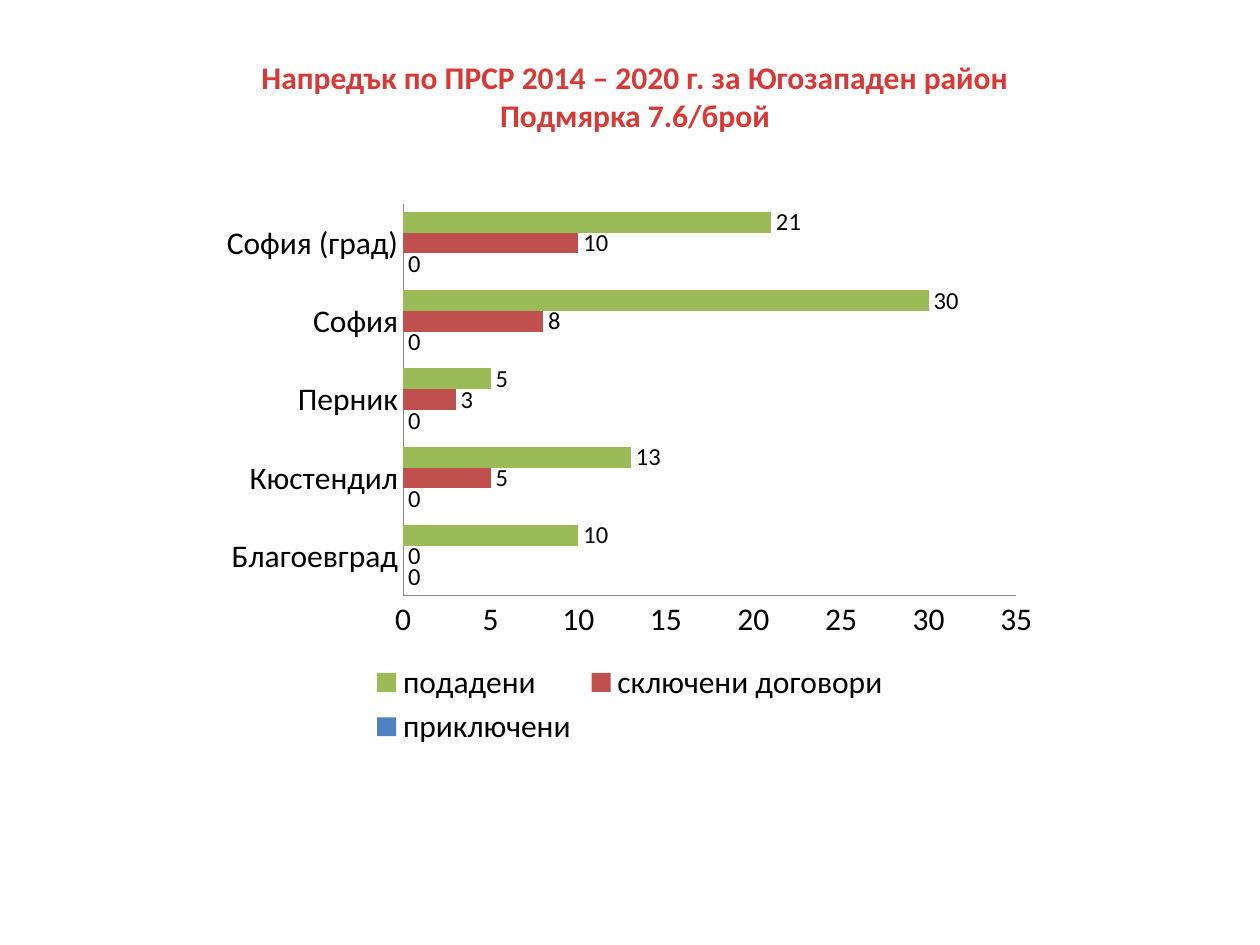
from dataclasses import dataclass

from pptx import Presentation
from pptx.chart.data import CategoryChartData
from pptx.dml.color import RGBColor
from pptx.enum.chart import XL_CHART_TYPE, XL_LABEL_POSITION, XL_LEGEND_POSITION, XL_TICK_MARK
from pptx.enum.text import MSO_ANCHOR, PP_ALIGN
from pptx.oxml import parse_xml
from pptx.oxml.ns import nsdecls
from pptx.util import Inches, Pt

FONT = "Calibri"
BLACK = "000000"
AXIS_GREY = "868686"
TITLE_RED = "D73A36"
TITLE = "Напредък по ПРСР 2014 – 2020 г. за Югозападен район\vПодмярка 7.6/брой"
DISTRICTS = ["Благоевград", "Кюстендил", "Перник", "София", "София (град)"]


@dataclass
class Box:
    left: float
    top: float
    width: float
    height: float

    def on_slide(self, presentation):
        width, height = presentation.slide_width, presentation.slide_height
        return (int(self.left * width), int(self.top * height),
                int(self.width * width), int(self.height * height))


@dataclass
class ProjectStage:
    name: str
    counts: list[int]
    color: str


TITLE_BOX = Box(0.054, 0.055, 0.9, 0.095)
CHART_BOX = Box(1 / 6, 0.204, 2 / 3, 0.592)
PLOT_BOX = Box(0.23, 0.02, 0.73, 0.7)
STAGES = [
    ProjectStage("приключени", [0, 0, 0, 0, 0], "4F81BD"),
    ProjectStage("сключени договори", [0, 5, 3, 8, 10], "C0504D"),
    ProjectStage("подадени", [10, 13, 5, 30, 21], "9BBB59"),
]


def rgb(color: str) -> RGBColor:
    return RGBColor.from_string(color)


def format_font(font, size: float, color: str = BLACK, bold: bool = False) -> None:
    font.name = FONT
    font.size = Pt(size)
    font.bold = bold
    font.color.rgb = rgb(color)


def write_text(shape, text: str, *, size: float, color: str, bold: bool, align) -> None:
    frame = shape.text_frame
    frame.word_wrap = True
    frame.vertical_anchor = MSO_ANCHOR.TOP
    paragraph = frame.paragraphs[0]
    paragraph.text = text
    paragraph.alignment = align
    for run in paragraph.runs:
        format_font(run.font, size, color, bold)


def format_axis(axis) -> None:
    axis.has_major_gridlines = False
    axis.major_tick_mark = XL_TICK_MARK.NONE
    axis.minor_tick_mark = XL_TICK_MARK.NONE
    axis.format.line.color.rgb = rgb(AXIS_GREY)
    axis.format.line.width = Pt(0.75)
    format_font(axis.tick_labels.font, 18)


def place_plot(chart, box: Box) -> None:
    plot_area = chart.plots[0]._element.getparent()
    for layout in plot_area.findall("{*}layout"):
        plot_area.remove(layout)
    values = {"x": box.left, "y": box.top, "w": box.width, "h": box.height}
    sizes = "".join(f'<c:{key} val="{value}"/>' for key, value in values.items())
    plot_area.insert(0, parse_xml(
        f'<c:layout {nsdecls("c")}><c:manualLayout><c:layoutTarget val="inner"/>'
        f'<c:xMode val="edge"/><c:yMode val="edge"/>{sizes}</c:manualLayout></c:layout>'))


def add_progress_chart(presentation, slide) -> None:
    data = CategoryChartData(number_format="General")
    data.categories = DISTRICTS
    for stage in STAGES:
        data.add_series(stage.name, stage.counts)
    chart = slide.shapes.add_chart(
        XL_CHART_TYPE.BAR_CLUSTERED, *CHART_BOX.on_slide(presentation), data).chart
    format_font(chart.font, 18)
    chart.has_title = False
    chart.has_legend = True
    chart.legend.position = XL_LEGEND_POSITION.BOTTOM
    chart.legend.include_in_layout = False
    format_font(chart.legend.font, 18)
    format_axis(chart.category_axis)
    format_axis(chart.value_axis)
    chart.value_axis.minimum_scale = 0
    chart.value_axis.maximum_scale = 35
    chart.value_axis.major_unit = 5
    plot = chart.plots[0]
    plot.gap_width = 75
    plot.overlap = 0
    plot.vary_by_categories = False
    for series, stage in zip(plot.series, STAGES):
        series.format.fill.solid()
        series.format.fill.fore_color.rgb = rgb(stage.color)
        labels = series.data_labels
        labels.show_value = True
        labels.position = XL_LABEL_POSITION.OUTSIDE_END
        format_font(labels.font, 14)
    place_plot(chart, PLOT_BOX)


def main() -> None:
    presentation = Presentation()
    presentation.slide_width, presentation.slide_height = Inches(10), Inches(7.5)
    slide = presentation.slides.add_slide(presentation.slide_layouts[5])
    title = slide.shapes.title
    title.left, title.top, title.width, title.height = TITLE_BOX.on_slide(presentation)
    write_text(title, TITLE, size=18, color=TITLE_RED, bold=True, align=PP_ALIGN.CENTER)
    add_progress_chart(presentation, slide)
    presentation.save("out.pptx")


if __name__ == "__main__":
    main()
